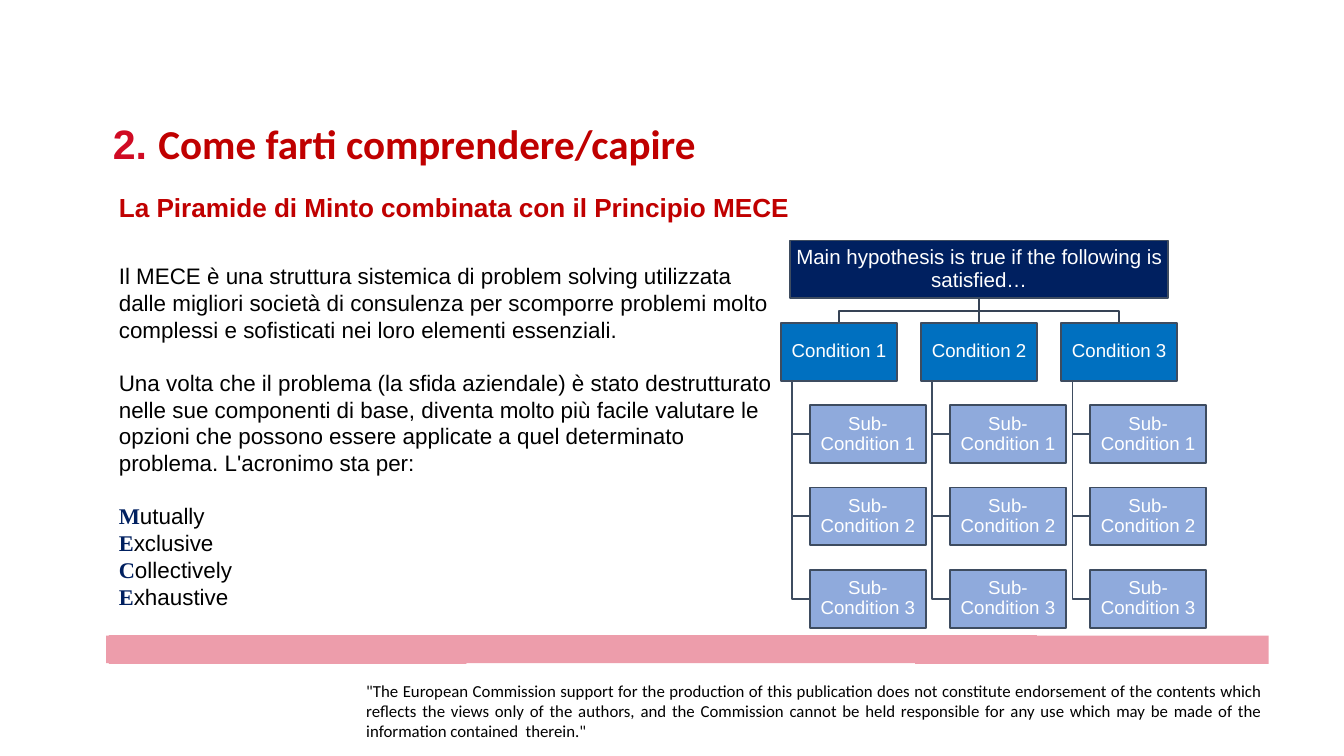
from dataclasses import dataclass

from pptx import Presentation
from pptx.dml.color import RGBColor
from pptx.enum.shapes import MSO_SHAPE
from pptx.enum.text import MSO_ANCHOR, PP_ALIGN
from pptx.util import Inches, Pt


@dataclass(frozen=True)
class Theme:
    """Colours, fonts and type sizes of the slide."""
    sans: str = "Arial"
    humanist: str = "Calibri"
    serif: str = "Times New Roman"
    black: str = "000000"
    white: str = "FFFFFF"
    number: str = "D00B24"
    red: str = "C00000"
    navy: str = "002060"
    blue: str = "0070C0"
    pale_blue: str = "8FAADC"
    outline: str = "3E4C60"
    link: str = "364355"
    band: str = "ED9DAB"
    title: int = 44
    subtitle: int = 28
    body: int = 24
    root: int = 22
    node: int = 20
    footer: int = 18


T = Theme()


def add_run(p, text, size=T.body, font=T.sans, color=T.black, bold=False):
    """Append formatted text to a paragraph."""
    r = p.add_run()
    r.text = text
    r.font.size = Pt(size)
    r.font.name = font
    r.font.bold = bold
    r.font.color.rgb = RGBColor.from_string(color)


def setup_frame(tf, inset_x, inset_y, anchor=MSO_ANCHOR.TOP):
    """Wrap a text frame, set its insets and return its first paragraph."""
    tf.word_wrap = True
    tf.margin_left = tf.margin_right = Inches(inset_x)
    tf.margin_top = tf.margin_bottom = Inches(inset_y)
    tf.vertical_anchor = anchor
    return tf.paragraphs[0]


def add_textbox(s, box, inset_x=0.1, inset_y=0.05):
    """Add a text box and return its first paragraph and frame."""
    tf = s.shapes.add_textbox(*map(Inches, box)).text_frame
    return setup_frame(tf, inset_x, inset_y), tf


def add_path(s, points, closed=False):
    """Add a freeform through points given in inches."""
    start, *rest = [(Inches(x), Inches(y)) for x, y in points]
    builder = s.shapes.build_freeform(*start)
    builder.add_line_segments(rest, close=closed)
    sp = builder.convert_to_shape()
    sp.shadow.inherit = False
    return sp


def add_link(s, points, color):
    """Draw an open line of the tree."""
    sp = add_path(s, points)
    sp.fill.background()
    sp.line.color.rgb = RGBColor.from_string(color)
    sp.line.width = Pt(2)


def add_node(s, box, text, fill, size=T.node, inset=0.01):
    """Draw one labelled box of the tree."""
    sp = s.shapes.add_shape(MSO_SHAPE.RECTANGLE, *map(Inches, box))
    sp.shadow.inherit = False
    sp.fill.solid()
    sp.fill.fore_color.rgb = RGBColor.from_string(fill)
    sp.line.color.rgb = RGBColor.from_string(T.outline)
    sp.line.width = Pt(2)
    p = setup_frame(sp.text_frame, inset, inset, MSO_ANCHOR.MIDDLE)
    p.alignment = PP_ALIGN.CENTER
    p.line_spacing = 0.9
    add_run(p, text, size=size, color=T.white)


def add_band(s, box):
    """Draw the pink band with its slightly stepped edges."""
    x, y, w, h = box
    step = 0.01
    edge = [(w, step), (13.85, step), (13.85, 0), (0.04, 0), (0.04, step),
            (0, step), (0, h - step), (0.04, h - step), (0.04, h), (5.36, h),
            (5.36, h - step), (12.04, h - step), (12.04, h), (w, h)]
    sp = add_path(s, [(x + dx, y + dy) for dx, dy in edge], closed=True)
    sp.fill.solid()
    sp.fill.fore_color.rgb = RGBColor.from_string(T.band)
    sp.line.fill.background()


def add_footer(s, box):
    """Write the justified disclaimer."""
    p, _ = add_textbox(s, box, 0, 0)
    p.alignment = PP_ALIGN.JUSTIFY
    p.line_spacing = 0.98
    add_run(p, '"The European Commission support for the production of this '
            "publication does not constitute endorsement of the contents which "
            "reflects the views only of the authors, and the Commission cannot "
            "be held responsible for any use which may be made of the "
            'information contained  therein."', size=T.footer, font=T.humanist)


def add_title(s, box):
    """Write the numbered title."""
    p, _ = add_textbox(s, box)
    add_run(p, "2. ", size=T.title, color=T.number, bold=True)
    add_run(p, "Come farti comprendere/capire", size=T.title,
            font=T.humanist, color=T.red, bold=True)


def add_subtitle(s, box):
    """Write the subtitle."""
    p, _ = add_textbox(s, box)
    add_run(p, "La Piramide di Minto combinata con il Principio MECE",
            size=T.subtitle, color=T.red, bold=True)


def add_body(s, box):
    """Write the two paragraphs and the acronym with its initials."""
    gap = Pt(28)
    p, tf = add_textbox(s, box)
    add_run(p, "Il MECE è una struttura sistemica di problem solving utilizzata "
            "dalle migliori società di consulenza per scomporre problemi molto "
            "complessi e sofisticati nei loro elementi essenziali.")
    p = tf.add_paragraph()
    p.space_before = p.space_after = gap
    add_run(p, "Una volta che il problema (la sfida aziendale) è stato "
            "destrutturato nelle sue componenti di base, diventa molto più "
            "facile valutare le opzioni che possono essere applicate a quel "
            "determinato problema. L'acronimo sta per:")
    for word in ("Mutually", "Exclusive", "Collectively", "Exhaustive"):
        p = tf.add_paragraph()
        add_run(p, word[0], font=T.serif, color=T.navy, bold=True)
        add_run(p, word[1:])


def add_tree(s, box):
    """Draw the hypothesis tree: a root, three conditions, nine sub-conditions."""
    x, y, w, h = box
    node_w, node_h, root_w = 1.73, 0.86, 5.62
    indent, spine = 0.43, 0.17
    col_step = (w - node_w - indent) / 2
    row_step = (h - node_h) / 4
    center = x + col_step + node_w / 2
    root_bottom, cond_top = y + node_h, y + row_step
    bend = (root_bottom + cond_top) / 2
    columns = [x + col_step * i for i in range(3)]
    rows = [y + row_step * i for i in range(2, 5)]

    for left in columns:
        middle = left + node_w / 2
        add_link(s, [(center, root_bottom), (center, bend),
                     (middle, bend), (middle, cond_top)], T.link)
        for top in rows:
            level = top + node_h / 2
            add_link(s, [(left + spine, cond_top + node_h),
                         (left + spine, level), (left + indent, level)], T.outline)

    add_node(s, (center - root_w / 2, y, root_w, node_h),
             "Main hypothesis is true if the following is satisfied…",
             T.navy, size=T.root, inset=0.02)
    for i, left in enumerate(columns, 1):
        add_node(s, (left, cond_top, node_w, node_h), f"Condition {i}", T.blue)
        for j, top in enumerate(rows, 1):
            add_node(s, (left + indent, top, node_w, node_h),
                     f"Sub-Condition {j}", T.pale_blue)


def main():
    """Build and save the slide."""
    prs = Presentation()
    prs.slide_width, prs.slide_height = Inches(20), Inches(11.25)
    s = prs.slides.add_slide(prs.slide_layouts[6])
    add_band(s, (1.58, 9.45, 17.3, 0.43))
    add_footer(s, (5.45, 10.15, 13.33, 0.76))
    add_title(s, (1.58, 1.72, 13.46, 0.84))
    add_subtitle(s, (1.67, 2.8, 17.35, 1.04))
    add_body(s, (1.67, 3.85, 10.03, 5.35))
    add_tree(s, (11.62, 3.58, 6.33, 5.76))
    prs.save("out.pptx")


if __name__ == "__main__":
    main()
